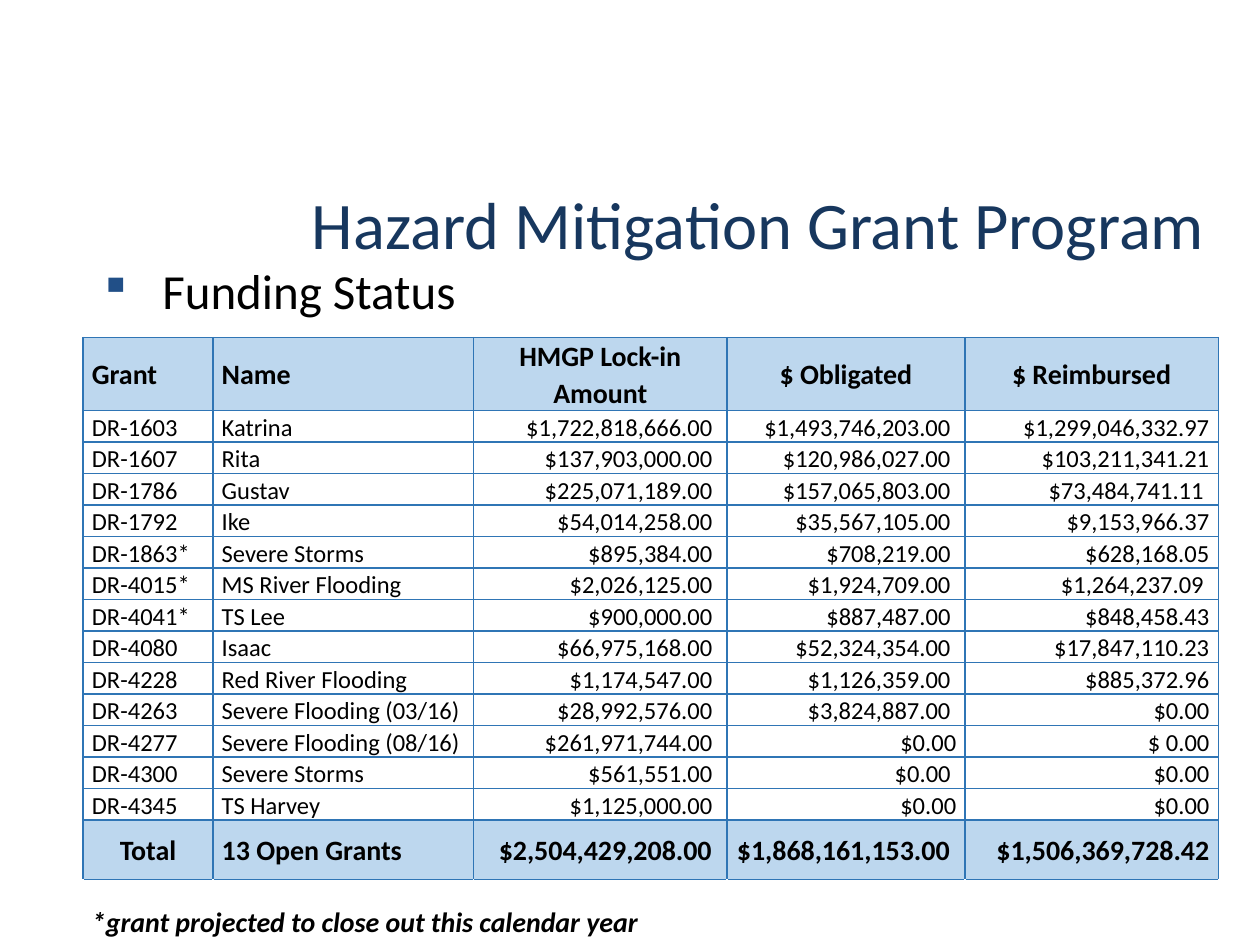
from lxml.etree import SubElement
from pptx import Presentation
from pptx.dml.color import RGBColor
from pptx.enum.text import MSO_ANCHOR, PP_ALIGN
from pptx.oxml.ns import qn
from pptx.util import Inches, Pt

# Content
TITLE = "Hazard Mitigation Grant Program"
POINT = "Funding Status"
NOTE = "*grant projected to close out this calendar year"
HEAD = ("Grant", "Name", "HMGP Lock-in Amount", "$ Obligated", "$ Reimbursed")
GRANTS = [
    ("DR-1603", "Katrina", "$1,722,818,666.00 ", "$1,493,746,203.00 ", "$1,299,046,332.97"),
    ("DR-1607", "Rita", "$137,903,000.00 ", "$120,986,027.00 ", "$103,211,341.21"),
    ("DR-1786", "Gustav", "$225,071,189.00 ", "$157,065,803.00 ", "$73,484,741.11 "),
    ("DR-1792", "Ike", "$54,014,258.00 ", "$35,567,105.00 ", "$9,153,966.37"),
    ("DR-1863*", "Severe Storms", "$895,384.00 ", "$708,219.00 ", "$628,168.05"),
    ("DR-4015*", "MS River Flooding", "$2,026,125.00 ", "$1,924,709.00 ", "$1,264,237.09 "),
    ("DR-4041*", "TS Lee", "$900,000.00 ", "$887,487.00 ", "$848,458.43"),
    ("DR-4080", "Isaac", "$66,975,168.00 ", "$52,324,354.00 ", "$17,847,110.23"),
    ("DR-4228", "Red River Flooding", "$1,174,547.00 ", "$1,126,359.00 ", "$885,372.96"),
    ("DR-4263", "Severe Flooding (03/16)", "$28,992,576.00 ", "$3,824,887.00 ", "$0.00"),
    ("DR-4277", "Severe Flooding (08/16)", "$261,971,744.00 ", "$0.00", "$ 0.00"),
    ("DR-4300", "Severe Storms", "$561,551.00 ", "$0.00 ", "$0.00"),
    ("DR-4345", "TS Harvey", "$1,125,000.00 ", "$0.00", "$0.00"),
]
TOTAL = ("Total", "13 Open Grants", "$2,504,429,208.00 ", "$1,868,161,153.00 ",
         "$1,506,369,728.42")

# Formats
INK = {"title": "17375E", "text": "000000", "mark": "214F87",
       "band": "BDD7EE", "line": "2F75B5"}
LEFT, MID, RIGHT = PP_ALIGN.LEFT, PP_ALIGN.CENTER, PP_ALIGN.RIGHT
FONTS = {
    "title": {"size": Pt(38)},
    "point": {"size": Pt(28)},
    "plain": {"size": Pt(14), "bold": False},
    "strong": {"size": Pt(16), "bold": True},
    "note": {"size": Pt(16), "bold": True, "italic": True},
}
ALIGNS = {
    "head": (LEFT, LEFT, MID, MID, MID),
    "grant": (LEFT, LEFT, RIGHT, RIGHT, RIGHT),
    "total": (MID, LEFT, RIGHT, RIGHT, RIGHT),
}
COLS = (1.03, 2.07, 2.01, 1.89, 2.01)
ROWS = [0.58] + [0.25] * len(GRANTS) + [0.47, 0.19, 0.21]
LAST = len(GRANTS) + 1


def write(para, text, style, ink="text", align=LEFT):
    para.alignment = align
    run = para.add_run()
    run.text = text
    for key, value in FONTS[style].items():
        setattr(run.font, key, value)
    run.font.name = "Calibri"
    run.font.color.rgb = RGBColor.from_string(INK[ink])


def add_box(left, top, width, height, anchor):
    box = slide.shapes.add_textbox(*map(Inches, (left, top, width, height)))
    frame = box.text_frame
    frame.word_wrap = True
    frame.vertical_anchor = anchor
    return frame.paragraphs[0]


def rule(cell, sides):
    for side in sides:
        line = SubElement(cell._tc.get_or_add_tcPr(), qn(f"a:ln{side}"), w=str(Pt(1)))
        fill = SubElement(line, qn("a:solidFill"))
        SubElement(fill, qn("a:srgbClr"), val=INK["line"])


def fill_cell(cell, text, style, align, anchor):
    pad = {"margin_left": Inches(0.07), "margin_right": Inches(0.07),
           "margin_top": 0, "margin_bottom": 0, "vertical_anchor": anchor}
    for key, value in pad.items():
        setattr(cell, key, value)
    para = cell.text_frame.paragraphs[0]
    para.line_spacing = 1.07
    write(para, text, style, align=align)


deck = Presentation()
deck.slide_width, deck.slide_height = Inches(10), Inches(7.5)
slide = deck.slides.add_slide(deck.slide_layouts[6])

# Bullet line
para = add_box(0.44, 2.02, 9.15, 0.6, MSO_ANCHOR.TOP)
props = para._p.get_or_add_pPr()
props.set("marL", str(Inches(0.75)))
props.set("indent", str(Inches(-0.5)))
SubElement(SubElement(props, qn("a:buClr")), qn("a:srgbClr"), val=INK["mark"])
SubElement(props, qn("a:buSzPct"), val="90000")
SubElement(props, qn("a:buChar"), char="▪")
write(para, POINT, "point")

# Title
write(add_box(0.31, 1.39, 9.35, 0.75, MSO_ANCHOR.MIDDLE), TITLE, "title", "title", RIGHT)

# Table grid
frame = slide.shapes.add_table(len(ROWS), len(COLS), Inches(0.66), Inches(2.68),
                               Inches(sum(COLS)), Inches(sum(ROWS)))
table = frame.table
table.first_row = table.horz_banding = False
for col, width in zip(table.columns, COLS):
    col.width = Inches(width)
for row, height in zip(table.rows, ROWS):
    row.height = Inches(height)

# Header, grants and total
for r, values in enumerate([HEAD, *GRANTS, TOTAL]):
    kind = {0: "head", LAST: "total"}.get(r, "grant")
    for c, text in enumerate(values):
        cell = table.cell(r, c)
        low = kind == "grant" and c < 2
        fill_cell(cell, text, "plain" if kind == "grant" else "strong", ALIGNS[kind][c],
                  MSO_ANCHOR.BOTTOM if low else MSO_ANCHOR.MIDDLE)
        rule(cell, "LRTB")
        if kind == "grant":
            cell.fill.background()
        else:
            cell.fill.solid()
            cell.fill.fore_color.rgb = RGBColor.from_string(INK["band"])

# Spacer row and footnote
for r in (LAST + 1, LAST + 2):
    for c in range(len(COLS)):
        cell = table.cell(r, c)
        cell.margin_top = cell.margin_bottom = 0
        if r == LAST + 1:
            rule(cell, "T")
        cell.fill.background()
        if r == LAST + 1 or c > 0:
            SubElement(cell.text_frame.paragraphs[0]._p, qn("a:endParaRPr"), sz="1000")
note = table.cell(LAST + 2, 0)
note.merge(table.cell(LAST + 2, 2))
fill_cell(note, NOTE, "note", LEFT, MSO_ANCHOR.BOTTOM)

deck.save("out.pptx")
